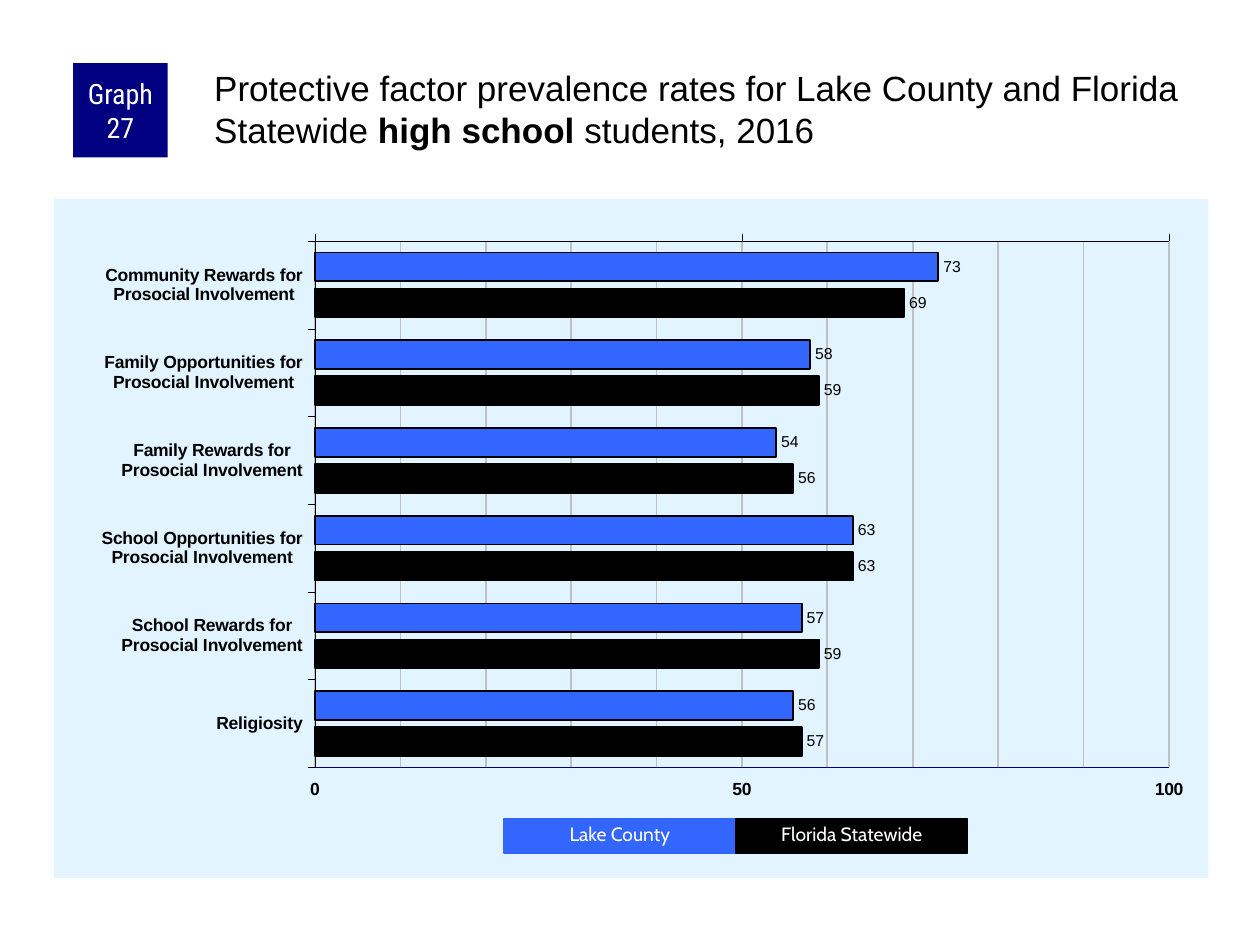
import copy
from dataclasses import dataclass

import lxml.etree
import pptx
import pptx.chart.data
import pptx.dml.color
import pptx.enum.chart
import pptx.enum.shapes
import pptx.enum.text
import pptx.oxml.ns
import pptx.util
from pptx.util import Inches

qualified_name = pptx.oxml.ns.qn


@dataclass(frozen=True)
class Theme:
    navy: str = "000080"
    blue: str = "3366FF"
    black: str = "000000"
    white: str = "FFFFFF"
    grid: str = "C0C0C0"
    panel: str = "E1F4FF"
    body_font: str = "Arial"
    badge_font: str = "Roboto Condensed"
    legend_font: str = "Cabin"
    title_size: float = 20
    badge_size: float = 16
    chart_size: float = 11.8
    legend_size: float = 11
    axis_size: float = 10
    label_size: float = 9


@dataclass(frozen=True)
class Group:
    name: str
    color: str
    rates: tuple[int, ...]


@dataclass(frozen=True)
class Box:
    left: float
    top: float
    width: float
    height: float

    def lengths(self) -> tuple:
        return tuple(map(Inches, (self.left, self.top, self.width, self.height)))


THEME = Theme()
FACTORS = (
    "Community Rewards for\nProsocial Involvement",
    "Family Opportunities for\nProsocial Involvement",
    "Family Rewards for\nProsocial Involvement",
    "School Opportunities for\nProsocial Involvement",
    "School Rewards for\nProsocial Involvement",
    "Religiosity",
)
GROUPS = (
    Group("Lake County", THEME.blue, (73, 58, 54, 63, 57, 56)),
    Group("Florida Statewide", THEME.black, (69, 59, 56, 63, 59, 57)),
)
CHART_BOX = Box(0.43, 1.58, 9.16, 5.39)
PLOT = {"x": 0.226, "y": 0.062, "w": 0.74, "h": 0.775}
LEGEND_BOX = Box(4, 6.5, 1.84, 0.27)


def rgb(color: str) -> pptx.dml.color.RGBColor:
    return pptx.dml.color.RGBColor.from_string(color)


def set_font(font, name: str, size: float, color: str, bold: bool = False) -> None:
    font.name = name
    font.size = pptx.util.Pt(size)
    font.color.rgb = rgb(color)
    font.bold = bold


def set_line(line, color: str, width: float) -> None:
    line.color.rgb = rgb(color)
    line.width = pptx.util.Pt(width)


def set_fill(fill, color: str) -> None:
    fill.solid()
    fill.fore_color.rgb = rgb(color)


def add_title(slide) -> None:
    title = slide.shapes.title
    title.left, title.top, title.width, title.height = Box(1.67, 0.5, 7.92, 0.83).lengths()
    frame = title.text_frame
    frame.word_wrap = True
    frame.auto_size = pptx.enum.text.MSO_AUTO_SIZE.NONE
    frame.vertical_anchor = pptx.enum.text.MSO_ANCHOR.TOP
    frame.margin_left = frame.margin_top = Inches(0.03)
    frame.margin_right = frame.margin_bottom = 0
    paragraph = frame.paragraphs[0]
    paragraph.alignment = pptx.enum.text.PP_ALIGN.LEFT
    for text, bold in (
        ("Protective factor prevalence rates for Lake County and Florida Statewide ", False),
        ("high school ", True),
        ("students, 2016", False),
    ):
        run = paragraph.add_run()
        run.text = text
        set_font(run.font, THEME.body_font, THEME.title_size, THEME.black, bold)


def add_label_box(slide, box: Box, text: str, color: str, font: str, size: float):
    shape = slide.shapes.add_shape(pptx.enum.shapes.MSO_SHAPE.RECTANGLE, *box.lengths())
    shape.shadow.inherit = False
    set_fill(shape.fill, color)
    shape.line.fill.background()
    shape.text_frame.text = text
    paragraph = shape.text_frame.paragraphs[0]
    paragraph.alignment = pptx.enum.text.PP_ALIGN.CENTER
    set_font(paragraph.runs[0].font, font, size, THEME.white)
    return shape


def add_badge(slide) -> None:
    badge = add_label_box(slide, Box(0.58, 0.5, 0.75, 0.75), "Graph 27",
                          THEME.navy, THEME.badge_font, THEME.badge_size)
    frame = badge.text_frame
    frame.margin_left = frame.margin_right = Inches(0.05)
    frame.margin_top = frame.margin_bottom = 0


def add_legend(slide) -> None:
    for index, group in enumerate(GROUPS):
        box = Box(LEGEND_BOX.left + index * LEGEND_BOX.width, LEGEND_BOX.top,
                  LEGEND_BOX.width, LEGEND_BOX.height)
        key = add_label_box(slide, box, group.name, group.color,
                            THEME.legend_font, THEME.legend_size)
        set_line(key.line, group.color, 0.75)
        key.text_frame.vertical_anchor = pptx.enum.text.MSO_ANCHOR.TOP
        key.text_frame.auto_size = pptx.enum.text.MSO_AUTO_SIZE.SHAPE_TO_FIT_TEXT
        key.text_frame.paragraphs[0].line_spacing = 0.9


def set_panel_and_plot(chart) -> None:
    """Fill the chart background and fix the inner plot area."""
    space = chart.element
    properties = lxml.etree.Element(qualified_name("c:spPr"))
    fill = lxml.etree.SubElement(properties, qualified_name("a:solidFill"))
    lxml.etree.SubElement(fill, qualified_name("a:srgbClr"), val=THEME.panel)
    line = lxml.etree.SubElement(properties, qualified_name("a:ln"))
    lxml.etree.SubElement(line, qualified_name("a:noFill"))
    space.find(qualified_name("c:chart")).addnext(properties)

    plot_area = space.find(".//" + qualified_name("c:plotArea"))
    for old_layout in plot_area.findall(qualified_name("c:layout")):
        plot_area.remove(old_layout)
    layout = lxml.etree.Element(qualified_name("c:layout"))
    manual = lxml.etree.SubElement(layout, qualified_name("c:manualLayout"))
    settings = {"layoutTarget": "inner", "xMode": "edge", "yMode": "edge", **PLOT}
    for name, value in settings.items():
        lxml.etree.SubElement(manual, qualified_name("c:" + name), val=str(value))
    plot_area.insert(0, layout)


def format_axes(chart) -> None:
    categories, values = chart.category_axis, chart.value_axis
    for axis in (categories, values):
        axis.major_tick_mark = pptx.enum.chart.XL_TICK_MARK.OUTSIDE
        axis.minor_tick_mark = pptx.enum.chart.XL_TICK_MARK.NONE
        set_font(axis.tick_labels.font, THEME.body_font, THEME.axis_size, THEME.black, True)
        set_line(axis.format.line, THEME.black, 0.25)
    categories.reverse_order = True
    categories.has_major_gridlines = False
    values.tick_label_position = pptx.enum.chart.XL_TICK_LABEL_POSITION.HIGH
    values.minimum_scale, values.maximum_scale = 0, 100
    values.major_unit, values.minor_unit = 50, 10
    values.has_major_gridlines = values.has_minor_gridlines = True
    set_line(values.major_gridlines.format.line, THEME.grid, 1)
    value_axis = chart.element.find(".//" + qualified_name("c:valAx"))
    major = value_axis.find(qualified_name("c:majorGridlines"))
    minor = value_axis.find(qualified_name("c:minorGridlines"))
    minor.append(copy.deepcopy(major.find(qualified_name("c:spPr"))))


def add_rates_chart(slide) -> None:
    data = pptx.chart.data.CategoryChartData(number_format="0")
    data.categories = FACTORS
    for group in GROUPS:
        data.add_series(group.name, group.rates)
    chart = slide.shapes.add_chart(
        pptx.enum.chart.XL_CHART_TYPE.BAR_CLUSTERED, *CHART_BOX.lengths(), data).chart
    chart.has_legend = chart.has_title = False
    set_font(chart.font, THEME.body_font, THEME.chart_size, THEME.black)
    set_panel_and_plot(chart)
    format_axes(chart)
    plot = chart.plots[0]
    plot.gap_width, plot.overlap, plot.vary_by_categories = 80, -25, False
    for series, group in zip(plot.series, GROUPS):
        set_fill(series.format.fill, group.color)
        set_line(series.format.line, THEME.black, 1)
        labels = series.data_labels
        labels.show_value = True
        labels.position = pptx.enum.chart.XL_LABEL_POSITION.OUTSIDE_END
        set_font(labels.font, THEME.body_font, THEME.label_size, THEME.black)


def add_baseline(slide) -> None:
    left = CHART_BOX.left + PLOT["x"] * CHART_BOX.width
    right = left + PLOT["w"] * CHART_BOX.width
    bottom = CHART_BOX.top + (PLOT["y"] + PLOT["h"]) * CHART_BOX.height
    line = slide.shapes.add_connector(
        pptx.enum.shapes.MSO_CONNECTOR.STRAIGHT,
        Inches(left), Inches(bottom), Inches(right), Inches(bottom))
    set_line(line.line, THEME.navy, 1)
    properties = line.element.find(qualified_name("p:spPr"))
    lxml.etree.SubElement(properties, qualified_name("a:effectLst"))


def main() -> None:
    presentation = pptx.Presentation()
    presentation.slide_width, presentation.slide_height = Inches(10), Inches(7.5)
    slide = presentation.slides.add_slide(presentation.slide_layouts.get_by_name("Title Only"))
    add_rates_chart(slide)
    add_baseline(slide)
    add_badge(slide)
    add_title(slide)
    add_legend(slide)
    presentation.save("out.pptx")


if __name__ == "__main__":
    main()
